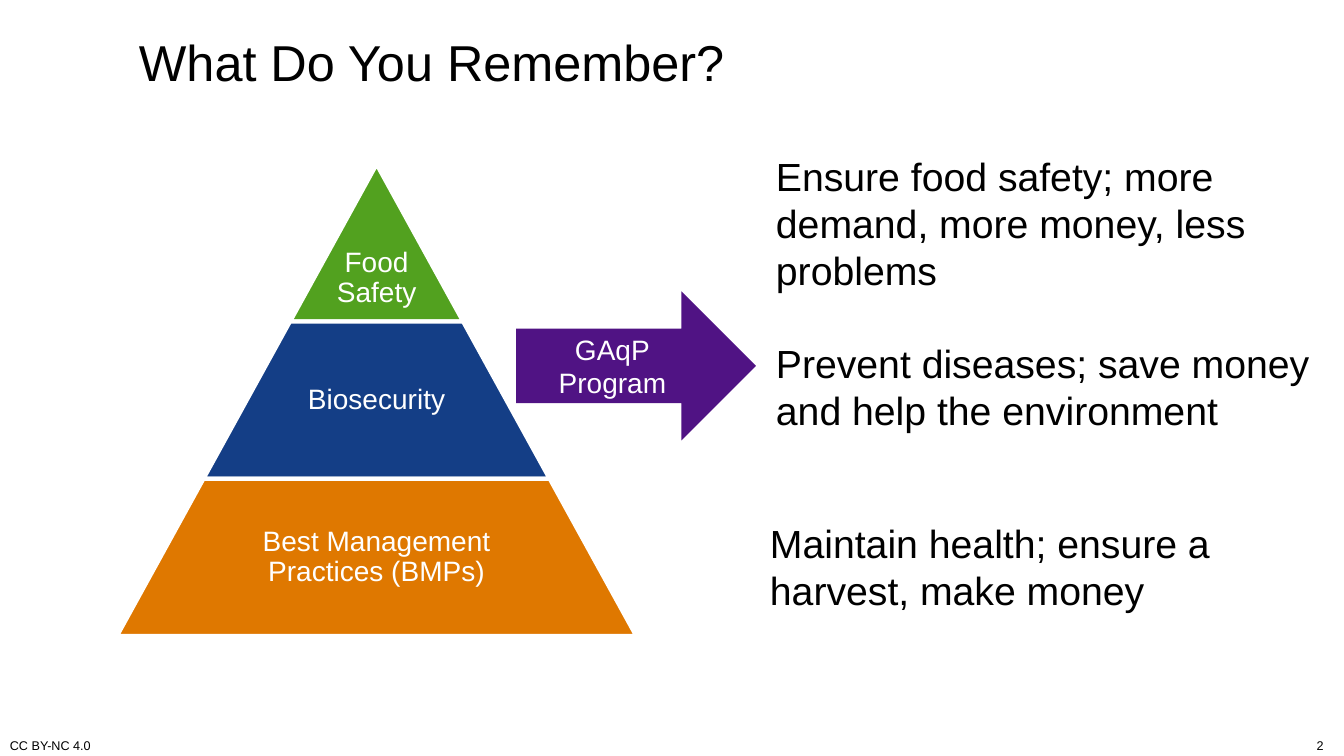
"""Build the slide that recalls the pyramid of the GAqP program and its benefits."""
import pptx
import pptx.dml.color
import pptx.enum.shapes
import pptx.enum.text
import pptx.util

THEME = {
    "font": "Arial", "ink": "000000", "light": "FFFFFF",
    "food": "52A11F", "biosecurity": "143E86", "practices": "DF7800", "program": "501384",
    "title": 36, "benefit": 28, "label": 20, "footer": 9,
}
SHAPE = pptx.enum.shapes.MSO_SHAPE
ALIGN = pptx.enum.text.PP_ALIGN
ANCHOR = pptx.enum.text.MSO_ANCHOR

deck = pptx.Presentation()
deck.slide_width = pptx.util.Inches(13.33)
deck.slide_height = pptx.util.Inches(7.5)
slide = deck.slides.add_slide(deck.slide_layouts[6])
column = deck.slide_width / 100
row = deck.slide_height / 100


def place(left, top, width, height):
    """Turn columns and rows of a 100 by 100 grid into slide lengths."""
    return int(left * column), int(top * row), int(width * column), int(height * row)


def write(text, at=None, holder=None, size="label", color="ink", align=ALIGN.LEFT,
          anchor=ANCHOR.TOP, spacing=1.0, insets=(0.1, 0.05, 0.1, 0.05)):
    """Write text into a holder, or into a new text box on the grid."""
    holder = holder or slide.shapes.add_textbox(*place(*at))
    frame = holder.text_frame
    frame.word_wrap = True
    frame.vertical_anchor = anchor
    frame.margin_left, frame.margin_top, frame.margin_right, frame.margin_bottom = map(
        pptx.util.Inches, insets)
    frame.text = text
    for paragraph in frame.paragraphs:
        paragraph.alignment = align
        paragraph.line_spacing = spacing
        paragraph.font.name = THEME["font"]
        paragraph.font.size = pptx.util.Pt(THEME[size])
        paragraph.font.color.rgb = pptx.dml.color.RGBColor.from_string(THEME[color])


write("What Do You Remember?", at=(9.6, 0, 86.25, 16.13), size="title", anchor=ANCHOR.MIDDLE)

benefits = [
    ("Ensure food safety; more demand, more money, less problems", (57, 19.47, 41.55, 20.13)),
    ("Prevent diseases; save money and help the environment", (57, 44.27, 42, 13.87)),
    ("Maintain health; ensure a harvest, make money", (56.55, 68, 41.4, 13.87)),
]
for benefit, at in benefits:
    write(benefit, at=at, size="benefit")

program = slide.shapes.add_shape(SHAPE.RIGHT_ARROW, *place(38.4, 38.53, 17.85, 19.73))
program.shadow.inherit = False
program.fill.solid()
program.fill.fore_color.rgb = pptx.dml.color.RGBColor.from_string(THEME["program"])
program.line.fill.background()
write("GAqP\nProgram", holder=program, color="light", align=ALIGN.CENTER,
      anchor=ANCHOR.MIDDLE, insets=(0, 0.05, 0.1, 0.05))

pyramid_center, pyramid_top = 28.02, 21.73
tier_growth, tier_height, label_share = 12.88, 20.8, 0.65
tiers = [
    ("Food Safety", "food", ANCHOR.BOTTOM, 0.13),
    ("Biosecurity", "biosecurity", ANCHOR.MIDDLE, 0.03),
    ("Best Management Practices (BMPs)", "practices", ANCHOR.MIDDLE, 0.03),
]
for level, (label, color, anchor, bottom_inset) in enumerate(tiers):
    tier_width = tier_growth * (level + 1)
    tier_top = pyramid_top + level * tier_height
    tier = slide.shapes.add_shape(
        SHAPE.TRAPEZOID,
        *place(pyramid_center - tier_width / 2, tier_top, tier_width, tier_height))
    tier.adjustments[0] = 0.55
    tier.shadow.inherit = False
    tier.fill.solid()
    tier.fill.fore_color.rgb = pptx.dml.color.RGBColor.from_string(THEME[color])
    tier.line.color.rgb = pptx.dml.color.RGBColor.from_string(THEME["light"])
    tier.line.width = pptx.util.Pt(3)
    label_width = tier_width * label_share
    write(label, at=(pyramid_center - label_width / 2, tier_top, label_width, tier_height),
          color="light", align=ALIGN.CENTER, anchor=anchor, spacing=0.9,
          insets=(0.03, 0.03, 0.03, bottom_inset))

write("CC BY-NC 4.0", at=(0, 97.47, 20.78, 2.8), size="footer", anchor=ANCHOR.BOTTOM)
write("2", at=(75.9, 97.2, 23.33, 3.07), size="footer", align=ALIGN.RIGHT, anchor=ANCHOR.BOTTOM)

deck.save("out.pptx")
